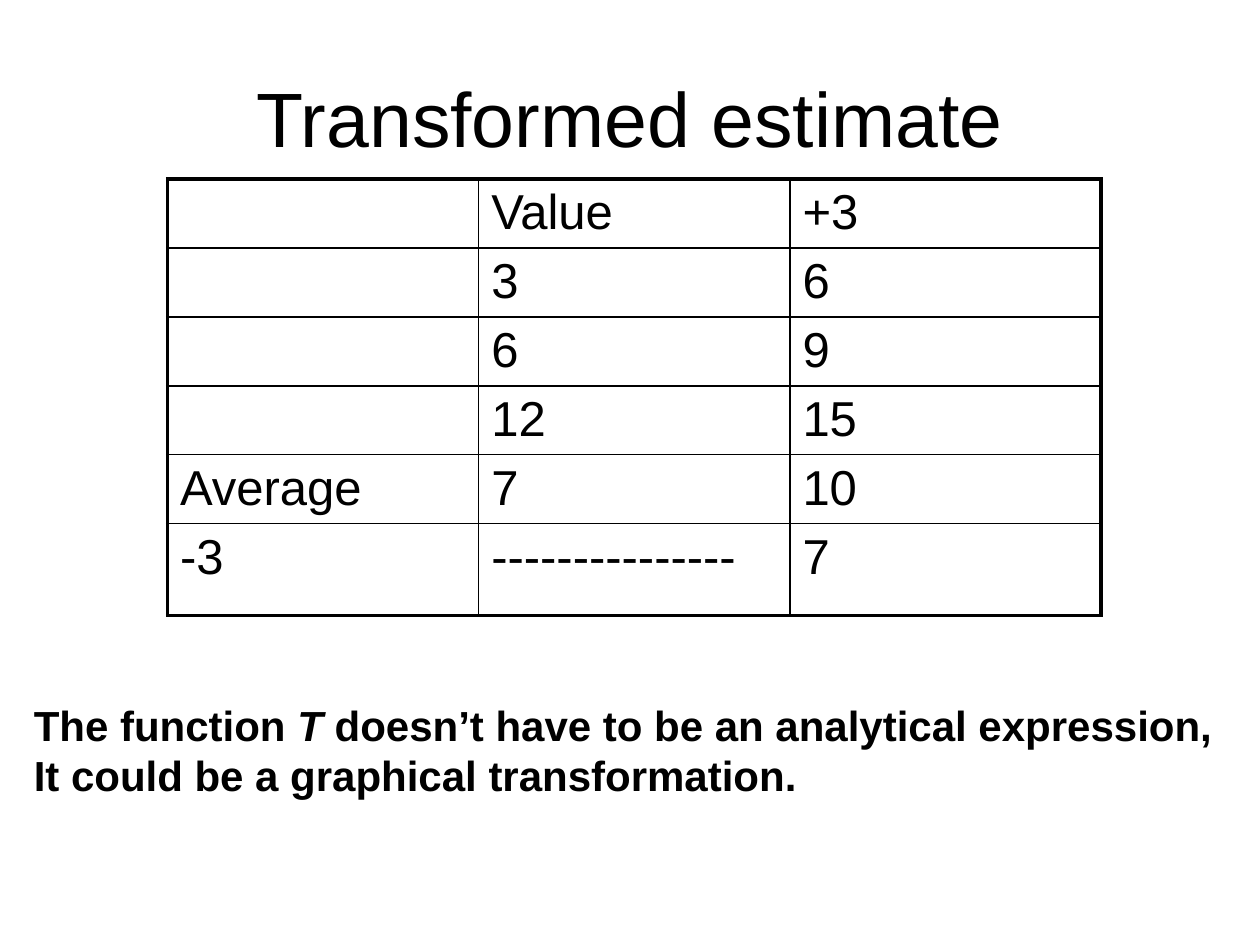
"""Build the slide 'Transformed estimate' with its table and closing remark."""
from pptx import Presentation
from pptx.dml.color import RGBColor
from pptx.enum.text import MSO_ANCHOR as ANCHOR, PP_ALIGN as ALIGN
from pptx.oxml.ns import qn
from pptx.util import Inches, Pt
from lxml.etree import SubElement

BLACK = "000000"
ROWS = [
    ["", "Value", "+3"],
    ["", "3", "6"],
    ["", "6", "9"],
    ["", "12", "15"],
    ["Average", "7", "10"],
    ["-3", "---------------", "7"],
]


def style(r, size, color=BLACK, bold=False, italic=False):
    r.font.name = "Arial"
    r.font.size = Pt(size)
    r.font.bold = bold
    r.font.italic = italic
    r.font.color.rgb = RGBColor.from_string(color)


def border(cell, side, width, color=BLACK):
    ln = SubElement(cell._tc.get_or_add_tcPr(), qn(f"a:ln{side}"), w=str(Pt(width)))
    fill = SubElement(ln, qn("a:solidFill"))
    SubElement(fill, qn("a:srgbClr"), val=color)


prs = Presentation()
prs.slide_width, prs.slide_height = Inches(10), Inches(7.5)
s = prs.slides.add_slide(prs.slide_layouts[6])

title = s.shapes.add_textbox(Inches(0.5), Inches(0.3), Inches(9), Inches(1.25))
tf = title.text_frame
tf.word_wrap = True
tf.vertical_anchor = ANCHOR.MIDDLE
tf.text = "Transformed estimate"
p = tf.paragraphs[0]
p.alignment = ALIGN.CENTER
style(p.runs[0], 44)

last_row, last_col = len(ROWS) - 1, len(ROWS[0]) - 1
heights = [0.53] * last_row + [0.73]
frame = s.shapes.add_table(len(ROWS), len(ROWS[0]), Inches(1.33), Inches(1.42),
                           Inches(7.42), Inches(sum(heights)))
table = frame.table
table.first_row = table.horz_banding = False
for col in table.columns:
    col.width = Inches(2.47)
for i, values in enumerate(ROWS):
    table.rows[i].height = Inches(heights[i])
    for j, value in enumerate(values):
        cell = table.cell(i, j)
        cell.margin_bottom = Inches(0.03)
        cell.text = value
        for r in cell.text_frame.paragraphs[0].runs:
            style(r, 28)
        outer = {"L": j == 0, "R": j == last_col, "T": i == 0, "B": i == last_row}
        for side, is_outer in outer.items():
            border(cell, side, 2.25 if is_outer else 1)
        cell.fill.background()

remark = s.shapes.add_textbox(Inches(0.17), Inches(5.5), Inches(9.56), Inches(0.9))
tf = remark.text_frame
tf.word_wrap = False
lines = [
    ["The function ", "T", " doesn’t have to be an analytical expression,"],
    ["It could be a graphical transformation."],
]
for i, parts in enumerate(lines):
    p = tf.add_paragraph() if i else tf.paragraphs[0]
    for part in parts:
        r = p.add_run()
        r.text = part
        style(r, 24, bold=True, italic=part == "T")

prs.save("out.pptx")
